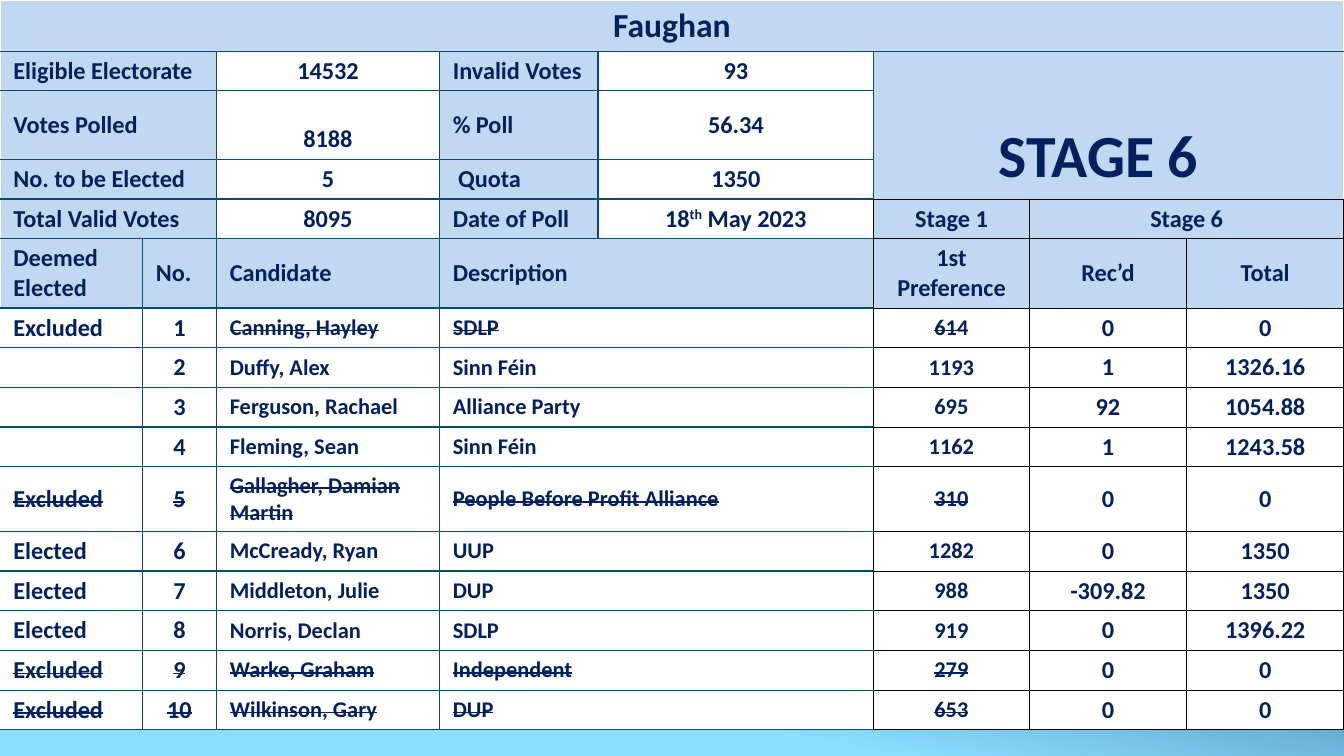
from lxml import etree
from pptx import Presentation, util as u
from pptx.dml.color import RGBColor
from pptx.enum import text
from pptx.oxml.ns import qn

HUE = {"navy": "002060", "pale": "C1D8F2", "white": "FFFFFF", "teal": "004E6C",
       "black": "000000", "deep": "0D3868", "sky": "8ADFFF"}
THIN, LINE, EDGE = ("black", 0.5), ("teal", 0.75), ("white", 1)
WIDE = 10
COLS = [1.06, 0.55, 1.66, 1.18, 2.05, 1.16, 1.17, 1.17]
ROW = 0.29
TALL = {0: 0.38, 2: 0.51, 5: 0.51, 10: 0.48}
COUNT = 16

# label, value, label, value
FACTS = [
    ("Eligible Electorate", "14532", "Invalid Votes", "93"),
    ("Votes Polled", "8188", "% Poll", "56.34"),
    ("No. to be Elected", "5", "Quota", "1350"),
    ("Total Valid Votes", "8095", "Date of Poll", "18^th^ May 2023"),
]
HEADS = ["Deemed Elected", "No.", "Candidate", "Description",
         "1st Preference", "Rec’d", "Total"]
# status, candidate, party, first preference, received, total
VOTES = [
    ("Excluded", "Canning, Hayley", "SDLP", "614", "0", "0"),
    ("", "Duffy, Alex", "Sinn Féin", "1193", "1", "1326.16"),
    ("", "Ferguson, Rachael", "Alliance Party", "695", "92", "1054.88"),
    ("", "Fleming, Sean", "Sinn Féin", "1162", "1", "1243.58"),
    ("Excluded", "Gallagher, Damian Martin", "People Before Profit Alliance",
     "310", "0", "0"),
    ("Elected", "McCready, Ryan", "UUP", "1282", "0", "1350"),
    ("Elected", "Middleton, Julie", "DUP", "988", "-309.82", "1350"),
    ("Elected", "Norris, Declan", "SDLP", "919", "0", "1396.22"),
    ("Excluded", "Warke, Graham", "Independent", "279", "0", "0"),
    ("Excluded", "Wilkinson, Gary", "DUP", "653", "0", "0"),
]
SPOTS = [0, 1, 2, 3, 5, 6, 7]  # grid column of each heading


def frame(cell, sides):
    """Draw the left, right, top and bottom border of a cell."""
    props = cell._tc.get_or_add_tcPr()
    for spot, (tag, (hue, width)) in enumerate(zip(("lnL", "lnR", "lnT", "lnB"), sides)):
        line = etree.Element(qn(f"a:{tag}"), w=str(u.Pt(width)))
        fill = etree.SubElement(line, qn("a:solidFill"))
        etree.SubElement(fill, qn("a:srgbClr"), val=HUE[hue])
        props.insert(spot, line)


def put(row, col, words, fill="white", size=13, mid=False, span=(1, 1),
        sides=(LINE,) * 4, struck=False):
    """Fill one cell; words between ^ marks are raised."""
    cell = grid.cell(row, col)
    if span != (1, 1):
        cell.merge(grid.cell(row + span[0] - 1, col + span[1] - 1))
    cell.fill.solid()
    cell.fill.fore_color.rgb = RGBColor.from_string(HUE[fill])
    cell.vertical_anchor = text.MSO_ANCHOR.MIDDLE
    cell.margin_left = cell.margin_right = u.Inches(0.1)
    cell.margin_top = cell.margin_bottom = u.Pt(2.7)
    frame(cell, sides)
    para = cell.text_frame.paragraphs[0]
    para.alignment = text.PP_ALIGN.CENTER if mid else text.PP_ALIGN.LEFT
    if not words:
        etree.SubElement(para._p, qn("a:endParaRPr"), sz=str(size * 100))
        return cell
    for turn, part in enumerate(words.split("^")):
        run = para.add_run()
        run.text = part
        run.font.name, run.font.size, run.font.bold = "Calibri", u.Pt(size), True
        run.font.color.rgb = RGBColor.from_string(HUE["navy"])
        if turn % 2:
            run._r.get_or_add_rPr().set("baseline", "30000")
        if struck:
            run._r.get_or_add_rPr().set("strike", "sngStrike")
    return cell


deck = Presentation()
deck.slide_width, deck.slide_height = u.Inches(WIDE), u.Inches(WIDE * 9 / 16)
slide = deck.slides.add_slide(deck.slide_layouts[6])
back = slide.background.fill
back.gradient()
back.gradient_angle = 360 - 102
for stop, hue, place in zip(back.gradient_stops, ("deep", "sky"), (0.42, 0.82)):
    stop.color.rgb = RGBColor.from_string(HUE[hue])
    stop.position = place

highs = [TALL.get(row, ROW) for row in range(COUNT)]
grid = slide.shapes.add_table(COUNT, len(COLS), 0, 0, u.Inches(sum(COLS)),
                              u.Inches(sum(highs))).table
grid.first_row = grid.horz_banding = False
for col, wide in zip(grid.columns, COLS):
    col.width = u.Inches(wide)
for row, high in zip(grid.rows, highs):
    row.height = u.Inches(high)

# Title and stage panel
put(0, 0, "Faughan", "pale", 18, True, (1, 8), (EDGE, EDGE, EDGE, LINE))
stage = put(1, 5, "STAGE 6", "pale", 32, True, (3, 3), (LINE, EDGE, LINE, THIN))
stage.vertical_anchor = text.MSO_ANCHOR.BOTTOM
stage.margin_right = u.Inches(0.25)

# Poll facts
first = (EDGE, LINE, LINE, LINE)
last = (LINE, THIN, LINE, LINE)
for row, (name, value, label, result) in enumerate(FACTS, 1):
    put(row, 0, name, "pale", span=(1, 2), sides=first)
    put(row, 2, value, mid=True)
    put(row, 3, label, "pale")
    put(row, 4, result, mid=True, sides=last if row == 4 else (LINE,) * 4)
grid.cell(2, 2).vertical_anchor = text.MSO_ANCHOR.BOTTOM
grid.cell(3, 3).margin_left = u.Inches(0.14)
put(4, 5, "Stage 1", "pale", mid=True, sides=(THIN,) * 4)
put(4, 6, "Stage 6", "pale", mid=True, span=(1, 2), sides=(THIN,) * 4)

# Headings and candidates
lines = [HEADS] + [(vote[0], str(no), *vote[1:]) for no, vote in enumerate(VOTES, 1)]
for row, cells in enumerate(lines, 5):
    head = row == 5
    for col, words in zip(SPOTS, cells):
        sides = {0: first, 3: last}.get(col, (LINE,) * 4 if col < 5 else (THIN,) * 4)
        out = cells[0] == "Excluded" and col < 6 and (row > 6 or col > 1)
        put(row, col, words, "pale" if head else "white",
            12 if col in (2, 3, 5) and not head else 13,
            col > 4 or (col == 1 and not head),
            (1, 2) if col == 3 else (1, 1), sides, out)

deck.save("out.pptx")
